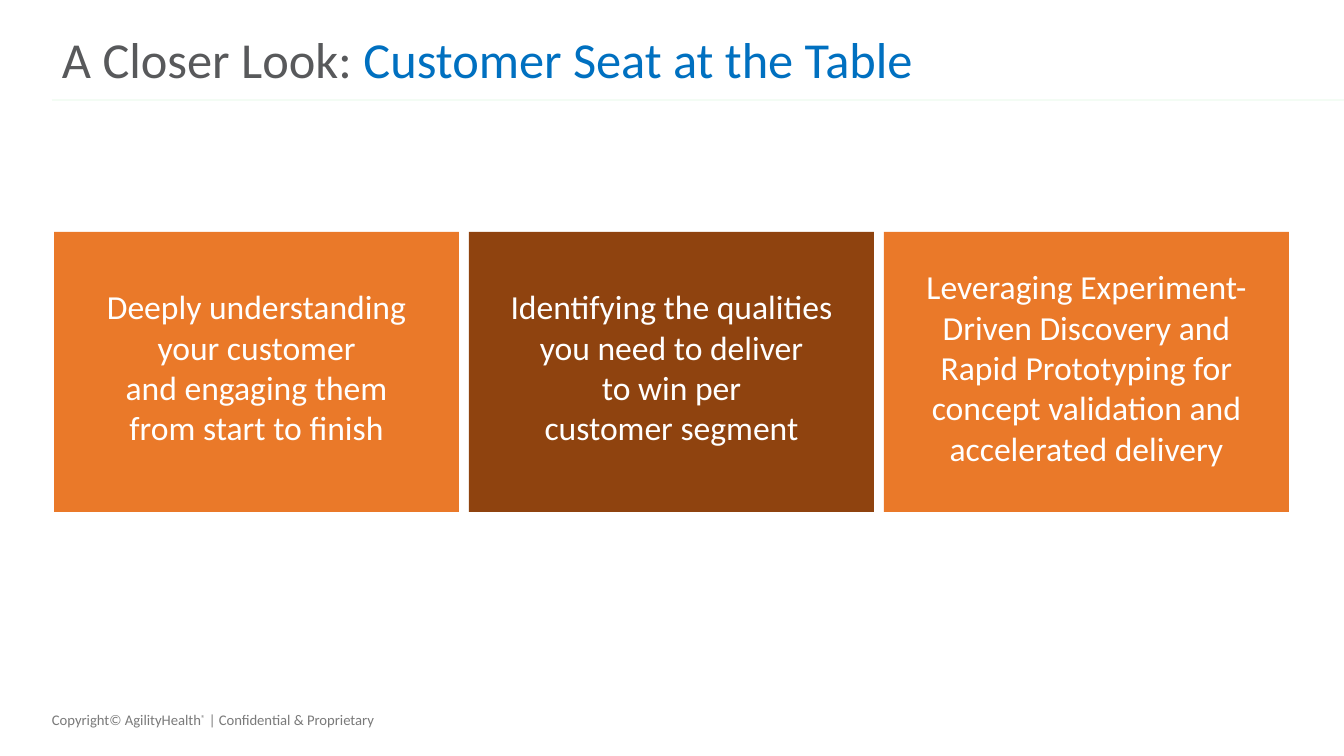
import pptx
import pptx.dml.color
import pptx.enum.shapes
import pptx.enum.text
import pptx.util
import lxml.etree
from dataclasses import dataclass

EMU_PER_PX = 914400 / 100.8
PAGE_WIDTH, PAGE_HEIGHT = 1344, 756
CARD_LEFT, CARD_TOP, CARD_WIDTH, CARD_HEIGHT, CARD_GAP = 54, 232, 405, 280, 10


@dataclass(frozen=True)
class Theme:
    font: str = "Calibri"
    title_size: float = 36
    card_size: float = 24
    footer_size: float = 10.5
    title: str = "58595B"
    accent: str = "0070C0"
    rule: str = "F3FCF4"
    footer: str = "7A7A7A"
    orange: str = "EA7929"
    brown: str = "8F430F"
    white: str = "FFFFFF"


THEME = Theme()

CARDS = [
    (THEME.orange, ["Deeply understanding", "your customer",
                    "and engaging them", "from start to finish"]),
    (THEME.brown, ["Identifying the qualities", "you need to deliver",
                   "to win per", "customer segment"]),
    (THEME.orange, ["Leveraging Experiment-Driven Discovery and",
                    "Rapid Prototyping for",
                    "concept validation and accelerated delivery"]),
]


def px(length):
    return pptx.util.Emu(round(length * EMU_PER_PX))


def rgb(color):
    return pptx.dml.color.RGBColor.from_string(color)


def set_frame(frame, anchor, top=5, bottom=5):
    frame.word_wrap = True
    frame.auto_size = pptx.enum.text.MSO_AUTO_SIZE.NONE
    frame.vertical_anchor = anchor
    frame.margin_left = frame.margin_right = px(10)
    frame.margin_top, frame.margin_bottom = px(top), px(bottom)


def add_span(para, text, size, color):
    span = para.add_run()
    span.text = text
    span.font.name = THEME.font
    span.font.size = pptx.util.Pt(size)
    span.font.color.rgb = rgb(color)
    return span


def set_title(page, lead, topic):
    title = page.shapes.title
    title.left, title.top, title.width, title.height = px(52), px(27), px(1239), px(71)
    set_frame(title.text_frame, pptx.enum.text.MSO_ANCHOR.MIDDLE)
    para = title.text_frame.paragraphs[0]
    para.alignment = pptx.enum.text.PP_ALIGN.LEFT
    para.line_spacing = 0.9
    add_span(para, lead, THEME.title_size, THEME.title)
    add_span(para, topic, THEME.title_size, THEME.accent)


def add_rule(page, left, top, right):
    rule = page.shapes.add_connector(
        pptx.enum.shapes.MSO_CONNECTOR.STRAIGHT, px(left), px(top), px(right), px(top))
    rule.line.color.rgb = rgb(THEME.rule)
    rule.line.width = pptx.util.Pt(2)
    lxml.etree.SubElement(rule._element.spPr, pptx.oxml.ns.qn("a:effectLst"))


def add_card(page, left, fill, lines):
    card = page.shapes.add_shape(
        pptx.enum.shapes.MSO_SHAPE.RECTANGLE,
        px(left), px(CARD_TOP), px(CARD_WIDTH), px(CARD_HEIGHT))
    card.shadow.inherit = False
    card.fill.solid()
    card.fill.fore_color.rgb = rgb(fill)
    card.line.fill.background()
    frame = card.text_frame
    set_frame(frame, pptx.enum.text.MSO_ANCHOR.MIDDLE, top=0, bottom=10)
    for index, line in enumerate(lines):
        para = frame.add_paragraph() if index else frame.paragraphs[0]
        para.alignment = pptx.enum.text.PP_ALIGN.CENTER
        add_span(para, line, THEME.card_size, THEME.white)


def add_footer(page):
    box = page.shapes.add_textbox(px(42), px(706), px(454), px(28))
    set_frame(box.text_frame, pptx.enum.text.MSO_ANCHOR.TOP)
    para = box.text_frame.paragraphs[0]
    add_span(para, "Copyright© AgilityHealth", THEME.footer_size, THEME.footer)
    mark = add_span(para, "®", THEME.footer_size, THEME.footer)
    mark._r.get_or_add_rPr().set("baseline", "30000")
    add_span(para, " | Confidential & Proprietary", THEME.footer_size, THEME.footer)


def main():
    deck = pptx.Presentation()
    deck.slide_width, deck.slide_height = px(PAGE_WIDTH), px(PAGE_HEIGHT)
    page = deck.slides.add_slide(deck.slide_layouts.get_by_name("Title Only"))

    # Footer and rule under the title
    add_footer(page)
    add_rule(page, 52, 100, PAGE_WIDTH)

    # Title
    set_title(page, "A Closer Look: ", "Customer Seat at the Table")

    # Row of cards
    for column, (fill, lines) in enumerate(CARDS):
        add_card(page, CARD_LEFT + column * (CARD_WIDTH + CARD_GAP), fill, lines)

    deck.save("out.pptx")


if __name__ == "__main__":
    main()
